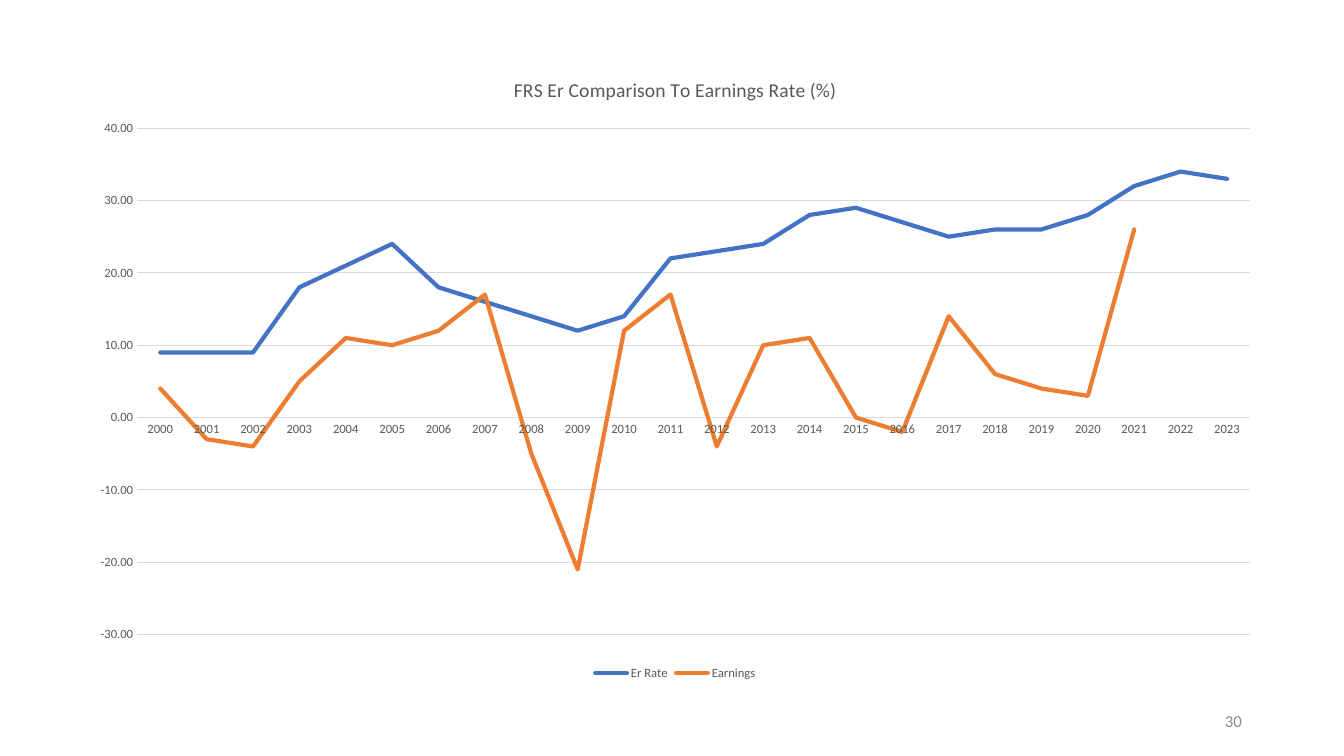
from pptx import Presentation
from pptx.chart.data import CategoryChartData
from pptx.dml.color import RGBColor
from pptx.enum.chart import XL_CHART_TYPE, XL_LEGEND_POSITION, XL_MARKER_STYLE, XL_TICK_MARK
from pptx.enum.text import MSO_ANCHOR, PP_ALIGN
from pptx.oxml.ns import qn
from pptx.util import Cm, Pt

COLORS = {
    "employer": "4472C4",
    "earnings": "ED7D31",
    "label": "595959",
    "grid": "D9D9D9",
    "number": "8C8C8C",
}

YEARS = [str(year) for year in range(2000, 2024)]
EMPLOYER_RATES = [9, 9, 9, 18, 21, 24, 18, 16, 14, 12, 14, 22,
                  23, 24, 28, 29, 27, 25, 26, 26, 28, 32, 34, 33]
EARNINGS = [4, -3, -4, 5, 11, 10, 12, 17, -5, -21, 12, 17,
            -4, 10, 11, 0, -2, 14, 6, 4, 3, 26, None, None]
SERIES = [
    ("Er Rate", EMPLOYER_RATES, "employer"),
    ("Earnings", EARNINGS, "earnings"),
]


def color_of(name):
    return RGBColor.from_string(COLORS[name])


def format_font(font, size, color, name="Calibri", bold=False):
    font.name = name
    font.size = Pt(size)
    font.bold = bold
    font.color.rgb = color_of(color)


def write_text(frame, text, align=PP_ALIGN.LEFT, **style):
    para = frame.paragraphs[0]
    para.alignment = align
    span = para.add_run()
    span.text = text
    format_font(span.font, **style)


def format_line(line, color, width):
    line.color.rgb = color_of(color)
    line.width = Pt(width)


class SlideBuilder:
    def __init__(self, deck):
        self.page = deck.slides.add_slide(deck.slide_layouts[6])
        self.label_style = {"size": 9, "color": "label"}

    def text(self, text, left, top, width, height, **style):
        box = self.page.shapes.add_textbox(Cm(left), Cm(top), Cm(width), Cm(height))
        frame = box.text_frame
        frame.word_wrap = True
        frame.vertical_anchor = MSO_ANCHOR.MIDDLE
        write_text(frame, text, **style)

    def line_chart(self, title, categories, series, left, top, width, height):
        data = CategoryChartData(number_format="0.00")
        data.categories = categories
        for name, values, color in series:
            data.add_series(name, values)
        chart = self.page.shapes.add_chart(
            XL_CHART_TYPE.LINE, Cm(left), Cm(top), Cm(width), Cm(height), data
        ).chart
        format_font(chart.font, **self.label_style)
        chart.has_title = True
        write_text(chart.chart_title.text_frame, title,
                   align=PP_ALIGN.CENTER, size=14, color="label")
        chart.chart_title.include_in_layout = False
        chart.has_legend = True
        chart.legend.position = XL_LEGEND_POSITION.BOTTOM
        chart.legend.include_in_layout = False
        format_font(chart.legend.font, **self.label_style)
        self.style_axes(chart)
        plot = chart.plots[0]
        plot.vary_by_categories = False
        for drawn, (name, values, color) in zip(plot.series, series):
            drawn.smooth = False
            drawn.marker.style = XL_MARKER_STYLE.NONE
            format_line(drawn.format.line, color, 3)
        for series_xml in chart.element.iter(qn("c:ser")):
            series_xml.find(qn("c:spPr")).find(qn("a:ln")).set("cap", "rnd")

    def style_axes(self, chart):
        for axis in (chart.category_axis, chart.value_axis):
            axis.major_tick_mark = XL_TICK_MARK.NONE
            axis.minor_tick_mark = XL_TICK_MARK.NONE
            format_font(axis.tick_labels.font, **self.label_style)
        chart.category_axis.has_major_gridlines = False
        format_line(chart.category_axis.format.line, "grid", 0.75)
        rates = chart.value_axis
        rates.minimum_scale = -30
        rates.maximum_scale = 40
        rates.major_unit = 10
        rates.has_major_gridlines = True
        format_line(rates.major_gridlines.format.line, "grid", 0.75)
        rates.format.line.fill.background()
        rates.tick_labels.number_format = "0.00"
        rates.tick_labels.number_format_is_linked = False


def main():
    deck = Presentation()
    deck.slide_width = Cm(33.87)
    deck.slide_height = Cm(19.05)
    builder = SlideBuilder(deck)
    builder.text("30", 23.93, 17.65, 7.62, 1.02,
                 align=PP_ALIGN.RIGHT, size=12, color="number")
    builder.line_chart("FRS Er Comparison To Earnings Rate (%)", YEARS, SERIES,
                       1.93, 1.37, 30.18, 15.88)
    deck.save("out.pptx")


if __name__ == "__main__":
    main()
